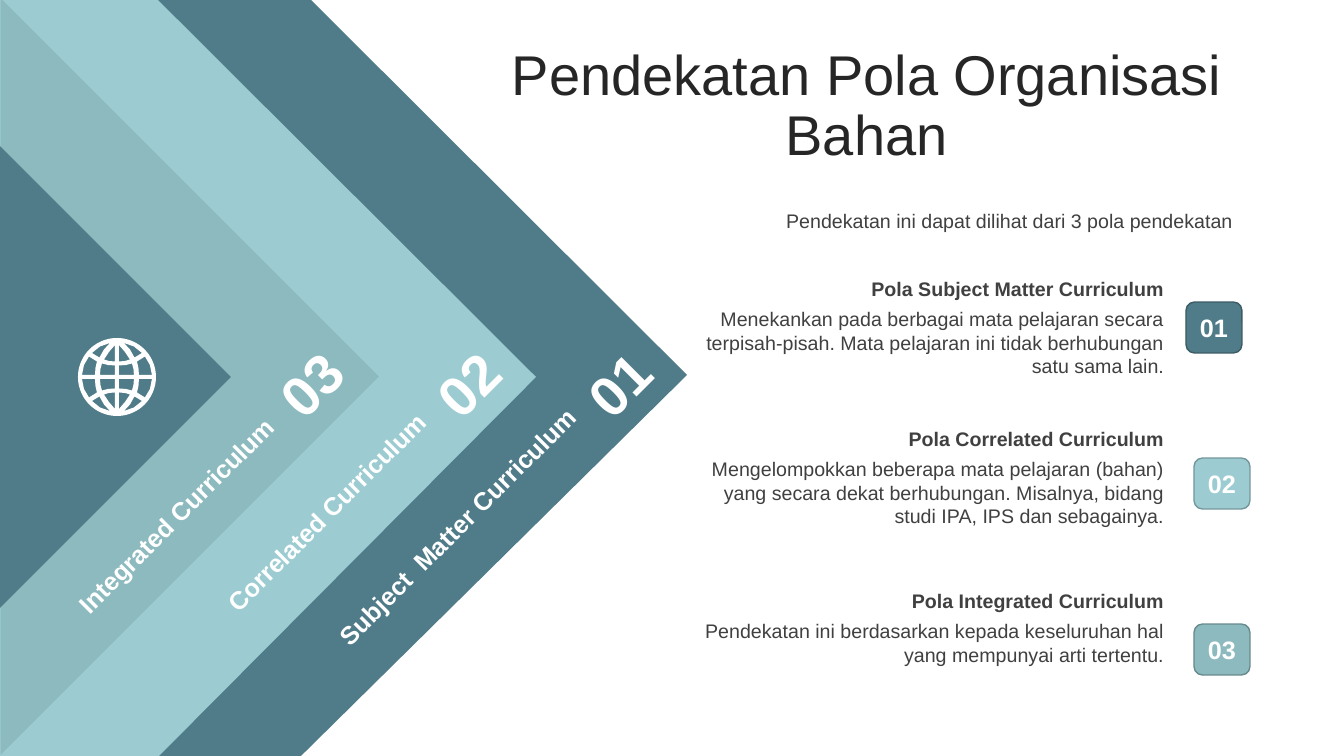
import math

from pptx import Presentation
from pptx.dml.color import RGBColor
from pptx.enum.shapes import MSO_SHAPE
from pptx.enum.text import MSO_ANCHOR, MSO_AUTO_SIZE, PP_ALIGN
from pptx.util import Emu, Pt

EMU_PER_PX = 914400 / 100.8
SLIDE_SIZE = (1344, 756)
FONT = "Arial"
LEFT, CENTER, RIGHT = PP_ALIGN.LEFT, PP_ALIGN.CENTER, PP_ALIGN.RIGHT
TOP, MIDDLE = MSO_ANCHOR.TOP, MSO_ANCHOR.MIDDLE
GROW, FIXED = MSO_AUTO_SIZE.SHAPE_TO_FIT_TEXT, MSO_AUTO_SIZE.NONE
TRIANGLE, BADGE = MSO_SHAPE.RIGHT_TRIANGLE, MSO_SHAPE.ROUNDED_RECTANGLE

DARK, LIGHT, SAGE = "507C89", "9CCCD2", "8CBABE"
WHITE, TITLE_INK, BODY_INK = "FFFFFF", "262626", "404040"

# number, fill, badge line, number box left, label box corner, label
BANDS = [
    ("01", DARK, "3B5C65", 566, (267, 514), "Subject  Matter Curriculum"),
    ("02", LIGHT, "73979B", 415, (117, 519), "Correlated Curriculum"),
    ("03", SAGE, "688A8D", 258, (-35, 524), "Integrated Curriculum"),
]
# top, heading width, text height, badge corner, heading, text
PATTERNS = [
    (272, 318, 82, (1186, 302), "Pola Subject Matter Curriculum",
     "Menekankan pada berbagai mata pelajaran secara terpisah-pisah. "
     "Mata pelajaran ini tidak berhubungan satu sama lain."),
    (422, 371, 82, (1194, 458), "Pola Correlated Curriculum",
     "Mengelompokkan beberapa mata pelajaran (bahan) yang secara dekat berhubungan. "
     "Misalnya, bidang studi IPA, IPS dan sebagainya."),
    (584, 492, 57, (1194, 624), "Pola Integrated Curriculum",
     "Pendekatan ini berdasarkan kepada keseluruhan hal yang mempunyai arti tertentu."),
]
# Openings in one quarter of the globe, measured from its centre
GLOBE_CELLS = [
    [(2, 2), (17, 2), (16.5, 8), (15, 13.5), (9, 12), (2, 11.5)],
    [(22, 2), (35, 2), (33, 12), (28, 20.5), (20, 15.5), (21.5, 9)],
    [(2, 15.5), (8, 16), (13, 17.5), (8, 25), (2, 32)],
    [(7, 34), (13, 27.5), (17.5, 19.5), (21, 21.5), (25, 24), (17, 30.5)],
]


def px(value):
    return Emu(round(value * EMU_PER_PX))


def color(hex_string):
    return RGBColor.from_string(hex_string)


def paint(shape, fill, line=None):
    shape.shadow.inherit = False
    shape.fill.solid()
    shape.fill.fore_color.rgb = color(fill)
    if line:
        shape.line.color.rgb = color(line)
        shape.line.width = Pt(1)
    else:
        shape.line.fill.background()


def write(shape, text, size, ink, align, anchor=TOP, bold=False, fit=GROW):
    frame = shape.text_frame
    frame.text = text
    frame.word_wrap = True
    frame.auto_size = fit
    frame.vertical_anchor = anchor
    paragraph = frame.paragraphs[0]
    paragraph.alignment = align
    font = paragraph.runs[0].font
    font.name, font.size, font.bold = FONT, Pt(size), bold
    font.color.rgb = color(ink)
    return paragraph


def add_text(shapes, box, text, size, ink, align, anchor=TOP, bold=False, rotation=0):
    shape = shapes.add_textbox(*map(px, box))
    shape.rotation = rotation
    write(shape, text, size, ink, align, anchor, bold)


def add_outline(shapes, contours, fill):
    """Draw closed contours as one filled outline."""
    contours = [[(px(x), px(y)) for x, y in contour] for contour in contours]
    builder = shapes.build_freeform(*contours[0][0], scale=1.0)
    builder.add_line_segments(contours[0][1:], close=True)
    for contour in contours[1:]:
        builder.move_to(*contour[0])
        builder.add_line_segments(contour[1:], close=True)
    paint(builder.convert_to_shape(), fill)


def add_title(slide, box):
    title = slide.shapes.title
    title.left, title.top, title.width, title.height = map(px, box)
    paragraph = write(title, "Pendekatan Pola Organisasi Bahan", 40, TITLE_INK,
                      CENTER, MIDDLE, fit=FIXED)
    paragraph.line_spacing = 0.9
    paragraph.space_before = Pt(10)


def add_globe(shapes, box):
    left, top, size = box
    center_x, center_y, radius = left + size / 2, top + size / 2, size / 2
    angles = [math.radians(step * 5) for step in range(72)]
    contours = [[(center_x + radius * math.cos(angle), center_y + radius * math.sin(angle))
                 for angle in angles]]
    for sign_x in (-1, 1):
        for sign_y in (-1, 1):
            contours += [[(center_x + sign_x * x, center_y + sign_y * y) for x, y in cell]
                         for cell in GLOBE_CELLS]
    add_outline(shapes, contours, WHITE)


def add_arrow_bands(shapes, box):
    left, top, width, height = box
    bottom = top + height
    # Outer bands
    add_outline(shapes, [[(left, top - 4), (left + 309, top - 3), (left + width, top + 375),
                          (left + 301, bottom), (left, bottom)]], DARK)
    add_outline(shapes, [[(left, top), (left + 159, top), (left + 537, top + 377),
                          (left + 159, bottom), (left, bottom)]], LIGHT)
    # Inner triangles, turned to point right
    for x, y, side, fill in ((-267, 109, 535, SAGE), (-165, 213, 328, DARK)):
        triangle = shapes.add_shape(TRIANGLE, px(left + x + 1), px(top + y), px(side), px(side))
        triangle.rotation = 225
        paint(triangle, fill)
    # Slanted numbers and labels
    for number, _, _, number_left, (label_left, label_top), label in BANDS:
        add_text(shapes, (number_left, top + 345, 106, 77), number, 40, WHITE, CENTER,
                 bold=True, rotation=315)
        add_text(shapes, (label_left, label_top, 364, 40), label, 18, WHITE, RIGHT,
                 MIDDLE, bold=True, rotation=315)
    add_globe(shapes, (left + 79, top + 338, 78))


def add_patterns(shapes, box):
    left, top, width = box
    add_text(shapes, (751, top, 492, 34), "Pendekatan ini dapat dilihat dari 3 pola pendekatan",
             14, BODY_INK, RIGHT)
    for band, pattern in zip(BANDS, PATTERNS):
        number, fill, line = band[:3]
        heading_top, heading_width, text_height, (badge_left, badge_top), heading, text = pattern
        group = shapes.add_group_shape().shapes
        add_text(group, (left, heading_top + 30, width, text_height), text, 14, BODY_INK, RIGHT)
        add_text(group, (left + width - heading_width, heading_top, heading_width, 34),
                 heading, 14, BODY_INK, RIGHT, bold=True)
        badge = shapes.add_shape(BADGE, px(badge_left), px(badge_top), px(56), px(51))
        paint(badge, fill, line)
        write(badge, number, 18, WHITE, CENTER, MIDDLE, bold=True, fit=FIXED)


def main():
    presentation = Presentation()
    presentation.slide_width, presentation.slide_height = map(px, SLIDE_SIZE)
    slide = presentation.slides.add_slide(presentation.slide_layouts[5])
    add_title(slide, (422, 37, 889, 141))
    add_arrow_bands(slide.shapes, (-1, 0, 688, 757))
    add_patterns(slide.shapes, (686, 204, 488))
    presentation.save("out.pptx")


if __name__ == "__main__":
    main()
